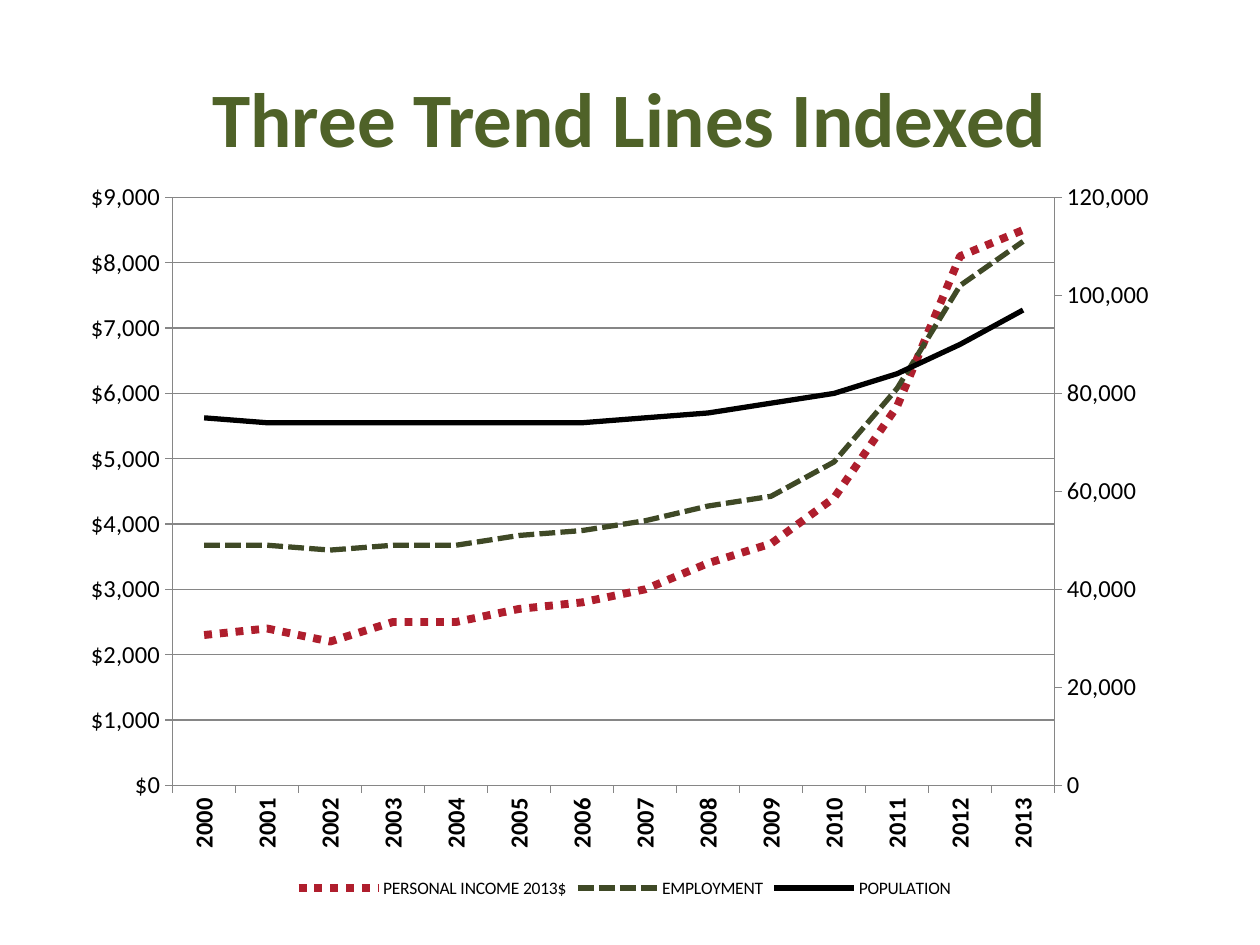
from copy import deepcopy

from lxml.etree import SubElement
from pptx import Presentation
from pptx.chart.data import CategoryChartData
from pptx.dml.color import RGBColor
from pptx.enum.chart import XL_CHART_TYPE, XL_LEGEND_POSITION, XL_TICK_MARK
from pptx.enum.dml import MSO_LINE
from pptx.enum.text import MSO_ANCHOR, PP_ALIGN
from pptx.oxml.ns import qn
from pptx.util import Pt

FONT = "Calibri"
COLORS = {
    "title": "4F6228",
    "text": "000000",
    "grid": "868686",
    "income": "AF1E2D",
    "employment": "3F4926",
    "population": "000000",
}
YEARS = [str(year) for year in range(2000, 2014)]
INCOME = [2300, 2400, 2200, 2500, 2500, 2700, 2800, 3000, 3400, 3700, 4400, 5800, 8100, 8500]
EMPLOYMENT = [49, 49, 48, 49, 49, 51, 52, 54, 57, 59, 66, 81, 102, 111]
POPULATION = [75, 74, 74, 74, 74, 74, 74, 75, 76, 78, 80, 84, 90, 97]
SERIES = [
    ("PERSONAL INCOME 2013$", INCOME, "income", 4.5, MSO_LINE.ROUND_DOT),
    ("EMPLOYMENT", EMPLOYMENT, "employment", 3, MSO_LINE.SQUARE_DOT),
    ("POPULATION", POPULATION, "population", 3, MSO_LINE.SOLID),
]


def color(name):
    return RGBColor.from_string(COLORS[name])


def add_title(page, left, top, width, height):
    box = page.shapes.add_textbox(Pt(left), Pt(top), Pt(width), Pt(height))
    frame = box.text_frame
    frame.word_wrap = True
    frame.vertical_anchor = MSO_ANCHOR.MIDDLE
    para = frame.paragraphs[0]
    para.alignment = PP_ALIGN.CENTER
    span = para.add_run()
    span.text = "Three Trend Lines Indexed"
    span.font.name = FONT
    span.font.size = Pt(44)
    span.font.bold = True
    span.font.color.rgb = color("title")


def style_axis(axis, bold=False):
    axis.major_tick_mark = XL_TICK_MARK.OUTSIDE
    axis.minor_tick_mark = XL_TICK_MARK.NONE
    axis.format.line.color.rgb = color("grid")
    axis.format.line.width = Pt(0.75)
    font = axis.tick_labels.font
    font.name = FONT
    font.size = Pt(14)
    font.bold = bold
    font.color.rgb = color("text")


def set_scale(axis, maximum, unit, number_format):
    axis.minimum_scale = 0
    axis.maximum_scale = maximum
    axis.major_unit = unit
    axis.tick_labels.number_format = number_format
    axis.tick_labels.number_format_is_linked = False


def set_plot_layout(plot_area, **fractions):
    for old in plot_area.findall(qn("c:layout")):
        plot_area.remove(old)
    layout = SubElement(plot_area, qn("c:layout"))
    plot_area.insert(0, layout)
    manual = SubElement(layout, qn("c:manualLayout"))
    settings = {"layoutTarget": "inner", "xMode": "edge", "yMode": "edge", **fractions}
    for name, value in settings.items():
        SubElement(manual, qn(f"c:{name}")).set("val", str(value))


def set_value(element, tag, value):
    element.find(qn(tag)).set("val", value)


def set_cross_between(axis):
    between = axis.find(qn("c:crossBetween"))
    if between is None:
        between = SubElement(axis, qn("c:crossBetween"))
        axis.find(qn("c:crosses")).addnext(between)
    between.set("val", "between")


def add_right_axis(chart):
    category = chart.category_axis._element
    value = chart.value_axis._element
    set_cross_between(value)
    plot_area = value.getparent()
    left_lines = plot_area.find(qn("c:lineChart"))
    right_lines = deepcopy(left_lines)
    for group, extra in ((left_lines, slice(1, None)), (right_lines, slice(0, 1))):
        for series in group.findall(qn("c:ser"))[extra]:
            group.remove(series)
    left_lines.addnext(right_lines)

    category_id, value_id = "50010", "50020"
    for axis_id, number in zip(right_lines.findall(qn("c:axId")), (category_id, value_id)):
        axis_id.set("val", number)
    right_value, hidden_category = deepcopy(value), deepcopy(category)
    for axis, own, other in (
        (right_value, value_id, category_id),
        (hidden_category, category_id, value_id),
    ):
        set_value(axis, "c:axId", own)
        set_value(axis, "c:crossAx", other)
    set_value(right_value, "c:axPos", "r")
    set_value(right_value, "c:crosses", "max")
    set_value(hidden_category, "c:delete", "1")
    right_value.remove(right_value.find(qn("c:majorGridlines")))
    value.addnext(right_value)
    right_value.addnext(hidden_category)
    right_axis = type(chart.value_axis)(right_value)
    set_scale(right_axis, 120000, 20000, "#,##0")


def add_trend_chart(page, left, top, width, height):
    data = CategoryChartData()
    data.categories = YEARS
    for name, thousands, *_ in SERIES:
        data.add_series(name, [value * 1000 for value in thousands])
    frame = page.shapes.add_chart(
        XL_CHART_TYPE.LINE, Pt(left), Pt(top), Pt(width), Pt(height), data
    )
    chart = frame.chart
    chart.has_title = False
    chart.font.name = FONT
    chart.font.size = Pt(10)
    chart.font.color.rgb = color("text")
    chart.has_legend = True
    chart.legend.position = XL_LEGEND_POSITION.BOTTOM
    chart.legend.include_in_layout = False
    chart.plots[0].vary_by_categories = False

    for series, (_, _, shade, weight, dash) in zip(chart.plots[0].series, SERIES):
        series.smooth = False
        line = series.format.line
        line.color.rgb = color(shade)
        line.width = Pt(weight)
        line.dash_style = dash

    style_axis(chart.category_axis, bold=True)
    labels = chart.category_axis._element.find(qn("c:txPr"))
    labels.find(qn("a:bodyPr")).set("rot", "-5400000")
    style_axis(chart.value_axis)
    set_scale(chart.value_axis, 9000000, 1000000, '"$"#,##0,')
    chart.value_axis.has_major_gridlines = True
    grid = chart.value_axis.major_gridlines.format.line
    grid.color.rgb = color("grid")
    grid.width = Pt(0.75)
    set_plot_layout(chart.value_axis._element.getparent(), x=0.09, y=0.04, w=0.8, h=0.8)
    add_right_axis(chart)


def main():
    deck = Presentation()
    deck.slide_width, deck.slide_height = Pt(720), Pt(540)
    page = deck.slides.add_slide(deck.slide_layouts[6])
    add_title(page, 36, 21.6, 648, 90)
    add_trend_chart(page, 42, 96, 630, 420)
    deck.save("out.pptx")


if __name__ == "__main__":
    main()
